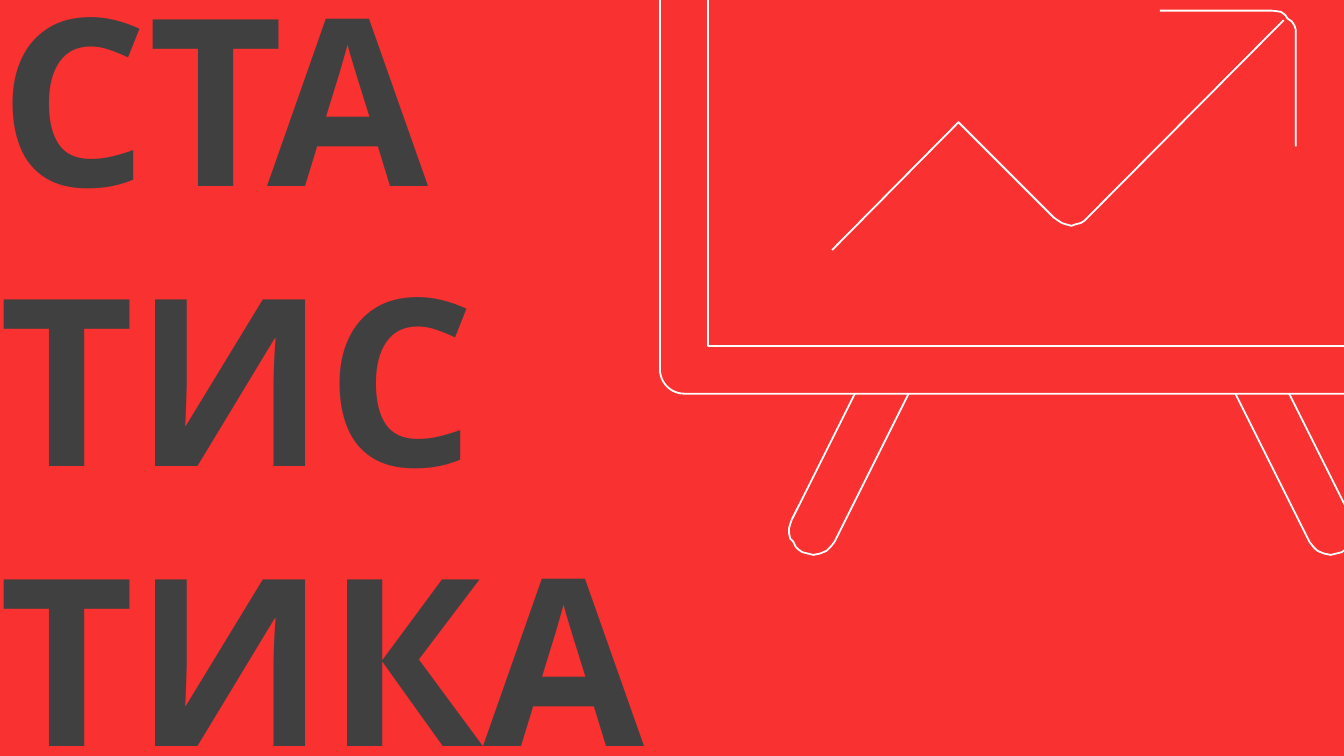
import pptx
import pptx.util
import pptx.dml.color
import pptx.enum.shapes
import pptx.enum.text
from collections import namedtuple
from dataclasses import dataclass

Pt = pptx.util.Pt
Box = namedtuple("Box", "left top width height")


@dataclass(frozen=True)
class Theme:
    background: str = "FA3131"
    title: str = "404040"
    outline: str = "FFFFFF"
    font: str = "Quicksand"
    title_size: float = 125
    outline_width: float = 0.96


THEME = Theme()

# Outlines in points, each relative to its own top left corner
LEG_WIDTH = 64.1
LEG = [(35.3, 0), (1.4, 67.7), (0.7, 69.8), (0, 72), (0, 74.9), (0.7, 77.8),
       (2.2, 79.2), (3.6, 82.1), (5, 83.5), (7.2, 85), (10.1, 85.7),
       (13, 86.4), (16.6, 85.7), (20.2, 84.2), (22.3, 82.1), (24.5, 79.2),
       (LEG_WIDTH, 0)]
TREND = [(241.9, 0), (136.8, 105.8), (135.4, 107.3), (133.2, 108.7),
         (130.3, 109.4), (128.2, 110.2), (125.3, 109.4), (123.1, 108.7),
         (121, 107.3), (118.8, 105.8), (67.7, 54.7), (0, 123.1)]
ARROWHEAD = [(0, 0), (59.8, 0), (62.6, 0.3), (64.8, 0.7), (67, 2.2),
             (68.4, 4.3), (70.6, 5.8), (72, 7.9), (72.7, 10.1), (72.7, 13),
             (72.7, 72.7)]


def color(value):
    return pptx.dml.color.RGBColor.from_string(value)


def style_outline(shape):
    shape.shadow.inherit = False
    shape.fill.background()
    shape.line.color.rgb = color(THEME.outline)
    shape.line.width = Pt(THEME.outline_width)


def add_outline(page, points, left, top):
    places = [(Pt(left + x), Pt(top + y)) for x, y in points]
    builder = page.shapes.build_freeform(*places[0], scale=1.0)
    builder.add_line_segments(places[1:], close=False)
    style_outline(builder.convert_to_shape())


def add_panel(page, kind, box):
    shape = page.shapes.add_shape(kind, *map(Pt, box))
    style_outline(shape)
    return shape


def add_text(page, text, box, *, font, size, ink, bold=False):
    frame = page.shapes.add_textbox(*map(Pt, box)).text_frame
    frame.word_wrap = True
    frame.auto_size = pptx.enum.text.MSO_AUTO_SIZE.SHAPE_TO_FIT_TEXT
    for index, line in enumerate(text.split("\n")):
        para = frame.paragraphs[0] if index == 0 else frame.add_paragraph()
        span = para.add_run()
        span.text = line
        span.font.name = font
        span.font.size = Pt(size)
        span.font.bold = bold
        span.font.color.rgb = color(ink)


def add_title(page, box):
    add_text(page, "СТА\nТИС\nТИКА", box, font=THEME.font,
             size=THEME.title_size, ink=THEME.title, bold=True)


def add_chart_board(page, box):
    kinds = pptx.enum.shapes.MSO_SHAPE
    # Board frame
    frame = add_panel(page, kinds.ROUNDED_RECTANGLE, box)
    frame.adjustments[0] = 13 / box.height

    # Legs, the right one mirrored
    inset = 69.1
    mirrored = [(LEG_WIDTH - x, y) for x, y in LEG]
    bottom = box.top + box.height
    add_outline(page, LEG, box.left + inset, bottom)
    add_outline(page, mirrored,
                box.left + box.width - inset - LEG_WIDTH, bottom)

    # Screen
    margin = 25.6
    add_panel(page, kinds.RECTANGLE,
              Box(box.left + margin, box.top + margin,
                  box.width - 2 * margin, box.height - 2 * margin))

    # Rising trend and its arrowhead
    add_outline(page, TREND, box.left + 92.2, box.top + 82.1)
    add_outline(page, ARROWHEAD, box.left + 267.8, box.top + 77)


def main():
    deck = pptx.Presentation()
    deck.slide_width, deck.slide_height = Pt(720), Pt(405)
    page = deck.slides.add_slide(deck.slide_layouts[6])
    page.background.fill.solid()
    page.background.fill.fore_color.rgb = color(THEME.background)
    add_title(page, Box(-7.2, -28.8, 547.2, 479.5))
    add_chart_board(page, Box(353.6, -71.3, 441.4, 282.2))
    deck.save("out.pptx")


if __name__ == "__main__":
    main()
